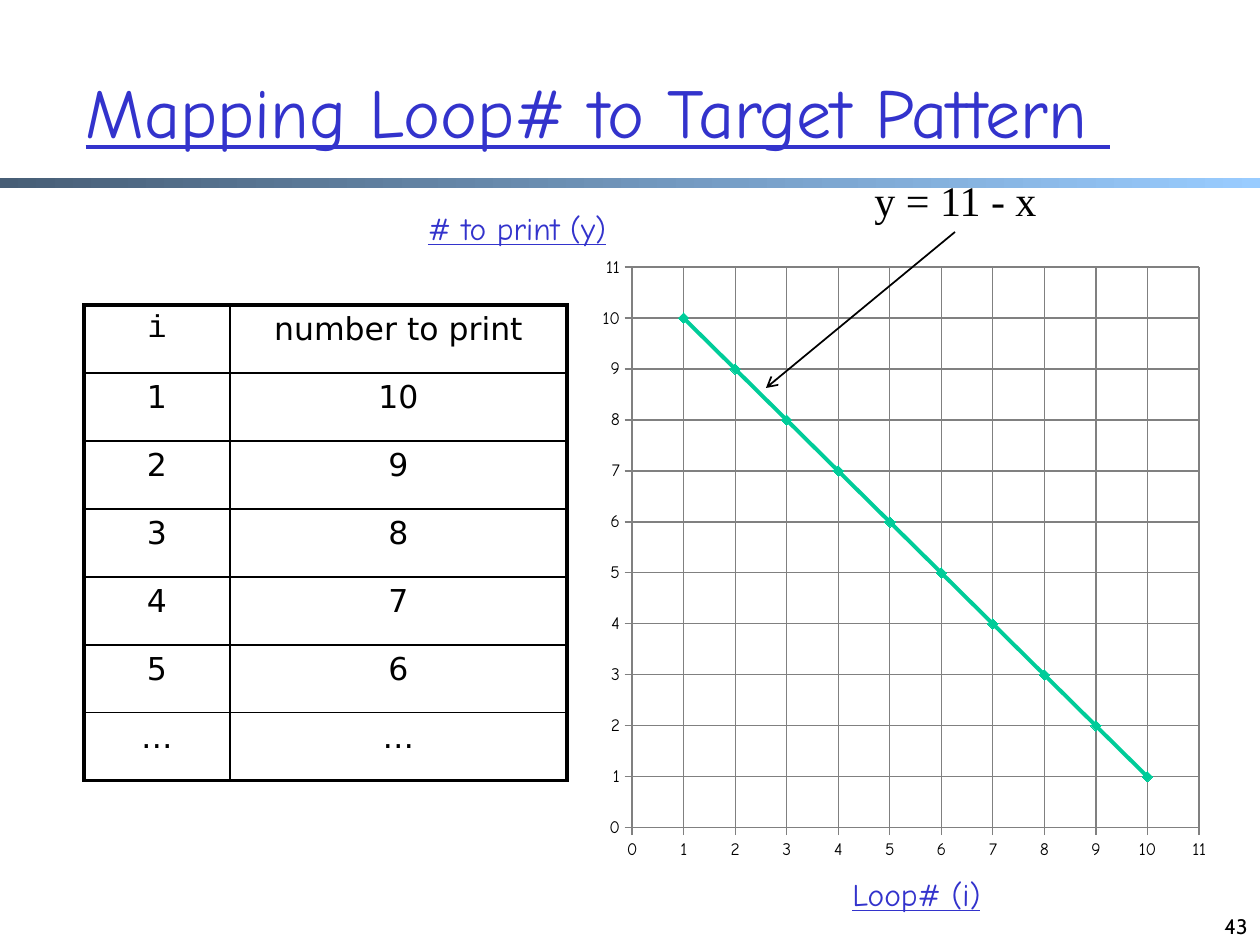
from dataclasses import dataclass

from lxml.etree import SubElement
from pptx import Presentation
from pptx.chart.data import XyChartData
from pptx.dml.color import RGBColor
from pptx.enum.chart import XL_CHART_TYPE as ChartType, XL_MARKER_STYLE as Marker, XL_TICK_MARK as Tick
from pptx.enum.shapes import MSO_CONNECTOR as Connector, MSO_SHAPE as Shape
from pptx.enum.text import MSO_ANCHOR as Anchor, PP_ALIGN as Align
from pptx.oxml import parse_xml
from pptx.oxml.ns import nsdecls, qn
from pptx.util import Emu, Pt

EMU_PER_PX = 914400 / 126


@dataclass(frozen=True)
class Theme:
    """Colours, fonts and type sizes of the slide."""
    ink: str = "000000"
    paper: str = "FFFFFF"
    accent: str = "3333CC"
    series: str = "00CC99"
    grid: str = "808080"
    bar_start: str = "475E76"
    bar_end: str = "99CCFF"
    hand: str = "Comic Neue"
    number: str = "Cabin"
    serif: str = "Times New Roman"
    sans: str = "DejaVu Sans"
    mono: str = "Courier New"
    title: int = 40
    formula: int = 24
    body: int = 18
    small: int = 12
    tick: int = 10


THEME = Theme()


def px(length):
    """Turn pixels into EMU."""
    return Emu(round(length * EMU_PER_PX))


def area(*lengths):
    """Turn left, top, width and height in pixels into EMU."""
    return [px(length) for length in lengths]


def rgb(value):
    """Turn a hex string into a colour."""
    return RGBColor.from_string(value)


def write(frame, text, font=THEME.hand, size=THEME.body, color=THEME.ink,
          underline=None, align=Align.CENTER, before=None):
    """Fill a text frame with one formatted paragraph."""
    para = frame.paragraphs[0]
    para.alignment = align
    para.space_before = before
    span = para.add_run()
    span.text = text
    span.font.name = font
    span.font.size = Pt(size)
    span.font.color.rgb = rgb(color)
    span.font.underline = underline


def add_label(page, box_area, text, wrap=False, anchor=Anchor.TOP, **style):
    """Add a text box."""
    frame = page.shapes.add_textbox(*area(*box_area)).text_frame
    frame.word_wrap = wrap
    frame.vertical_anchor = anchor
    write(frame, text, **style)


def set_title(page, text):
    """Place and format the title placeholder."""
    title = page.shapes.title
    title.left, title.top, title.width, title.height = area(73, 32, 1187, 157)
    title.text_frame.vertical_anchor = Anchor.MIDDLE
    write(title.text_frame, text, size=THEME.title, color=THEME.accent,
          underline=True, align=Align.LEFT)


def add_bar(page):
    """Add the gradient bar under the title."""
    bar = page.shapes.add_shape(Shape.RECTANGLE, *area(0, 178, 1260, 10))
    bar.shadow.inherit = False
    bar.line.fill.background()
    bar.fill.gradient()
    bar.fill.gradient_angle = 0
    for stop, color, position in zip(bar.fill.gradient_stops, (THEME.bar_start, THEME.bar_end), (0, 1)):
        stop.color.rgb = rgb(color)
        stop.position = position


def set_borders(cell, widths):
    """Draw the cell borders from widths in points, keyed by side."""
    properties = cell._tc.get_or_add_tcPr()
    for index, (side, width) in enumerate(widths.items()):
        properties.insert(index, parse_xml(
            f'<a:ln{side} {nsdecls("a")} w="{Pt(width)}"><a:solidFill>'
            f'<a:srgbClr val="{THEME.ink}"/></a:solidFill></a:ln{side}>'))


def add_grid(page, rows, left, top, widths, row_height, thick=2.25, thin=1):
    """Add a table with a thick frame and thin inner lines."""
    table = page.shapes.add_table(len(rows), len(widths), *area(
        left, top, sum(widths), row_height * len(rows))).table
    table.first_row = table.horz_banding = False
    for column, width in zip(table.columns, widths):
        column.width = px(width)
    last_row, last_col = len(rows) - 1, len(widths) - 1
    for r, values in enumerate(rows):
        table.rows[r].height = px(row_height)
        for c, value in enumerate(values):
            cell = table.cell(r, c)
            cell.fill.solid()
            cell.fill.fore_color.rgb = rgb(THEME.paper)
            font = THEME.mono if value == "i" else THEME.sans
            write(cell.text_frame, value, font=font, before=Pt(3.6))
            outer = {"L": c == 0, "R": c == last_col, "T": r == 0, "B": r == last_row}
            set_borders(cell, {side: thick if edge else thin for side, edge in outer.items()})


def format_axis(axis, maximum):
    """Give an axis its scale, ticks and gridlines."""
    axis.minimum_scale, axis.maximum_scale, axis.major_unit = 0, maximum, 1
    axis.major_tick_mark, axis.minor_tick_mark = Tick.OUTSIDE, Tick.NONE
    axis.has_major_gridlines = True
    for line in (axis.format.line, axis.major_gridlines.format.line):
        line.color.rgb = rgb(THEME.grid)
        line.width = Pt(0.75)


def set_plot_layout(chart, **shares):
    """Fix the inner plot area as shares of the chart."""
    plot_area = chart._chartSpace.chart.plotArea
    for old in plot_area.findall(qn("c:layout")):
        plot_area.remove(old)
    layout = parse_xml(f'<c:layout {nsdecls("c")}><c:manualLayout/></c:layout>')
    settings = {"layoutTarget": "inner", "xMode": "edge", "yMode": "edge", **shares}
    for name, value in settings.items():
        SubElement(layout[0], qn(f"c:{name}")).set("val", str(value))
    plot_area.insert(0, layout)


def add_line_plot(page, total):
    """Add the scatter chart of y = total - x."""
    data = XyChartData()
    points = data.add_series("Series 1")
    for x in range(1, total):
        points.add_data_point(x, total - x)
    chart = page.shapes.add_chart(ChartType.XY_SCATTER_LINES, *area(588, 242, 630, 630), data).chart
    chart.has_legend = chart.has_title = False
    chart.font.name, chart.font.size = THEME.hand, Pt(THEME.tick)
    chart.font.color.rgb = rgb(THEME.ink)
    for axis in (chart.category_axis, chart.value_axis):
        format_axis(axis, total)
    set_plot_layout(chart, x=0.07, y=0.04, w=0.9, h=0.89)
    plot = chart.plots[0]
    plot.vary_by_categories = False
    series = plot.series[0]
    series.smooth = False
    series.format.line.color.rgb = rgb(THEME.series)
    series.format.line.width = Pt(2.25)
    series.marker.style, series.marker.size = Marker.DIAMOND, 6
    series.marker.format.fill.solid()
    series.marker.format.fill.fore_color.rgb = rgb(THEME.series)
    series.marker.format.line.color.rgb = rgb(THEME.series)


def add_arrow(page, start, end):
    """Add a thin line with an open arrowhead at its end."""
    arrow = page.shapes.add_connector(Connector.STRAIGHT, *area(*start, *end))
    arrow.line.color.rgb = rgb(THEME.ink)
    arrow.line.width = Pt(1)
    SubElement(arrow.line._get_or_add_ln(), qn("a:tailEnd")).set("type", "arrow")
    SubElement(arrow._element.spPr, qn("a:effectLst"))


def main():
    """Build the slide and save it."""
    deck = Presentation()
    deck.slide_width, deck.slide_height = area(1260, 945)
    page = deck.slides.add_slide(deck.slide_layouts[5])
    add_bar(page)
    set_title(page, "Mapping Loop# to Target Pattern ")
    add_label(page, (966, 882, 294, 63), "43", wrap=True, anchor=Anchor.BOTTOM,
              font=THEME.number, size=THEME.small, align=Align.RIGHT)
    total = 11
    rows = [("i", "number to print"), *((str(i), str(total - i)) for i in range(1, 6)), ("…", "…")]
    add_grid(page, rows, left=84, top=305, widths=(146, 337), row_height=68)
    add_line_plot(page, total)
    add_arrow(page, (955, 232), (766, 388))
    add_label(page, (861, 168, 189, 63), "y = 11 - x", font=THEME.serif, size=THEME.formula)
    for box_area, text in (((835, 869, 163, 50), "Loop# (i)"), ((404, 203, 226, 50), "# to print (y)")):
        add_label(page, box_area, text, color=THEME.accent, underline=True)
    deck.save("out.pptx")


if __name__ == "__main__":
    main()
